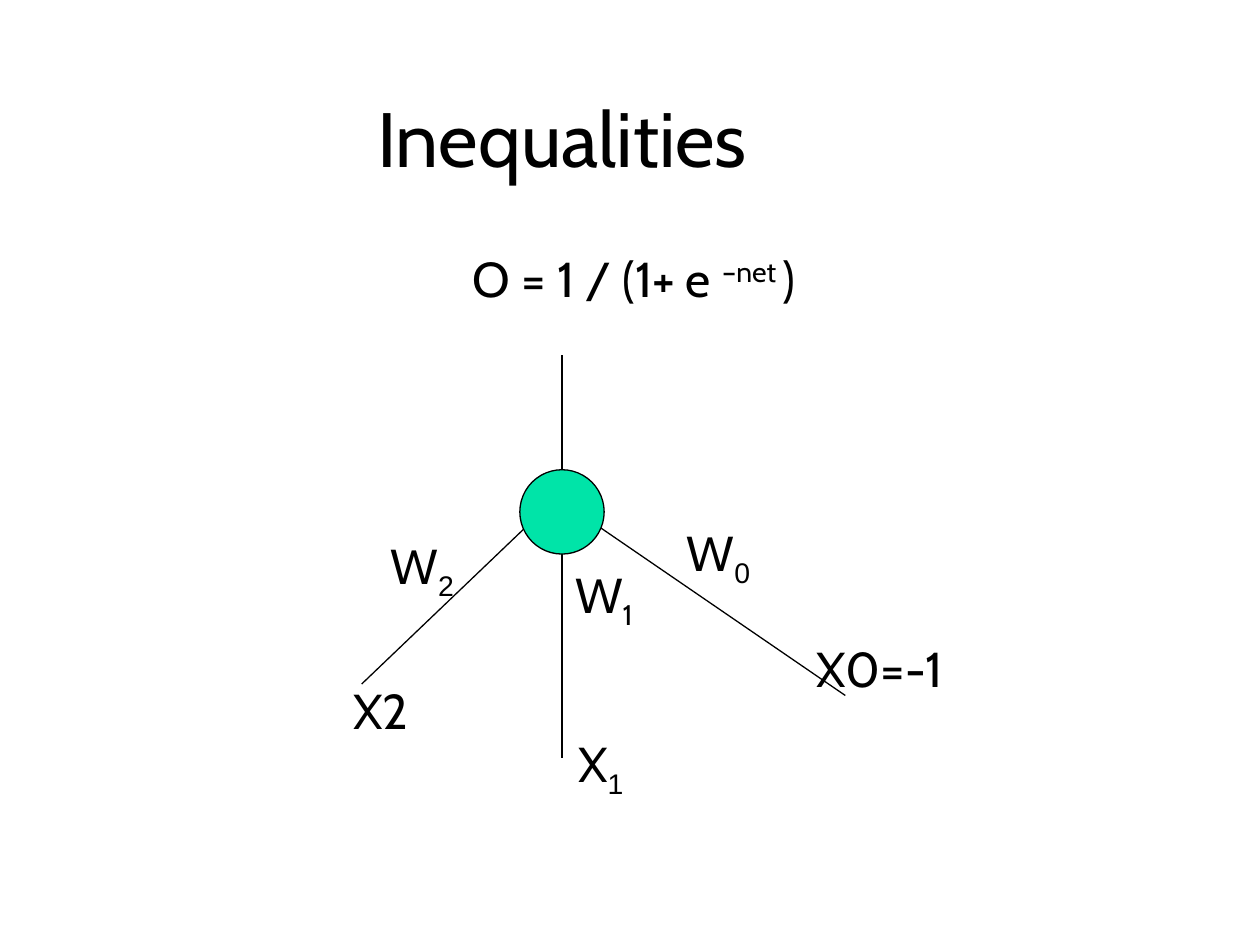
import pptx
import pptx.dml.color
import pptx.enum.shapes
import pptx.enum.text
import pptx.oxml
import pptx.util
from dataclasses import dataclass

Cm = pptx.util.Cm


@dataclass
class Theme:
    ink: pptx.dml.color.RGBColor = pptx.dml.color.RGBColor(0, 0, 0)
    neuron: pptx.dml.color.RGBColor = pptx.dml.color.RGBColor(0x00, 0xE4, 0xA8)
    font: str = "Cabin"
    digit_font: str = "Arial"
    title_size: int = 44
    text_size: int = 28
    line_width: float = 0.75


theme = Theme()


def add_run(p, text, size=theme.text_size, font=theme.font, baseline=0):
    r = p.add_run()
    r.text = text
    r.font.size = pptx.util.Pt(size)
    r.font.name = font
    r.font.color.rgb = theme.ink
    if baseline:
        r.font._element.set("baseline", str(baseline * 1000))


def add_label(shapes, box, runs):
    tb = shapes.add_textbox(*map(Cm, box))
    tf = tb.text_frame
    tf.word_wrap = False
    tf.auto_size = pptx.enum.text.MSO_AUTO_SIZE.SHAPE_TO_FIT_TEXT
    p = tf.paragraphs[0]
    p.alignment = pptx.enum.text.PP_ALIGN.CENTER
    for text, fmt in runs:
        add_run(p, text, **fmt)


prs = pptx.Presentation()
prs.slide_width, prs.slide_height = Cm(25.4), Cm(19.05)
s = prs.slides.add_slide(prs.slide_layouts[5])

title = s.shapes.title
title.left, title.top, title.width, title.height = map(Cm, (1.27, 1.7, 20.12, 1.47))
tf = title.text_frame
tf.vertical_anchor = pptx.enum.text.MSO_ANCHOR.TOP
tf.auto_size = pptx.enum.text.MSO_AUTO_SIZE.NONE
p = tf.paragraphs[0]
p.alignment = pptx.enum.text.PP_ALIGN.CENTER
add_run(p, "Inequalities", size=theme.title_size)

add_label(s.shapes, (8.71, 4.88, 8.15, 1.45),
          [("O = 1 / (1+ e ", {}), ("–net ", {"baseline": 30}), (")", {})])

network = s.shapes.add_group_shape().shapes
axis, input_top = 11.33, 10.54
for ends in [
    (axis, input_top, axis, 15.29),
    (10.69, input_top, 7.29, 13.79),
    (11.96, input_top, 17.04, 14.02),
    (axis, 7.16, axis, 9.47),
]:
    line = network.add_connector(pptx.enum.shapes.MSO_CONNECTOR.STRAIGHT, *map(Cm, ends))
    line.line.color.rgb = theme.ink
    line.line.width = pptx.util.Pt(theme.line_width)
    line._element.spPr.append(pptx.oxml.parse_xml(
        '<a:effectLst xmlns:a="http://schemas.openxmlformats.org/drawingml/2006/main"/>'))

diameter = 1.7
neuron = network.add_shape(pptx.enum.shapes.MSO_SHAPE.OVAL, Cm(axis - diameter / 2), Cm(9.47),
                           Cm(diameter), Cm(diameter))
neuron.shadow.inherit = False
neuron.fill.solid()
neuron.fill.fore_color.rgb = theme.neuron
neuron.line.color.rgb = theme.ink
neuron.line.width = pptx.util.Pt(theme.line_width)

arial_sub = {"font": theme.digit_font, "baseline": -25}
for box, runs in [
    ((7.59, 10.67, 1.85, 1.47), [("W", {}), ("2", arial_sub)]),
    ((6.81, 13.59, 1.73, 1.45), [("X2", {})]),
    ((11.25, 11.25, 1.85, 1.47), [("W", {}), ("1", {"baseline": -25})]),
    ((11.33, 14.66, 1.57, 1.47), [("X", {}), ("1", arial_sub)]),
    ((13.56, 10.41, 1.85, 1.47), [("W", {}), ("0", arial_sub)]),
    ((16.13, 12.75, 3.2, 1.45), [("X0=-1", {})]),
]:
    add_label(network, box, runs)

prs.save("out.pptx")
